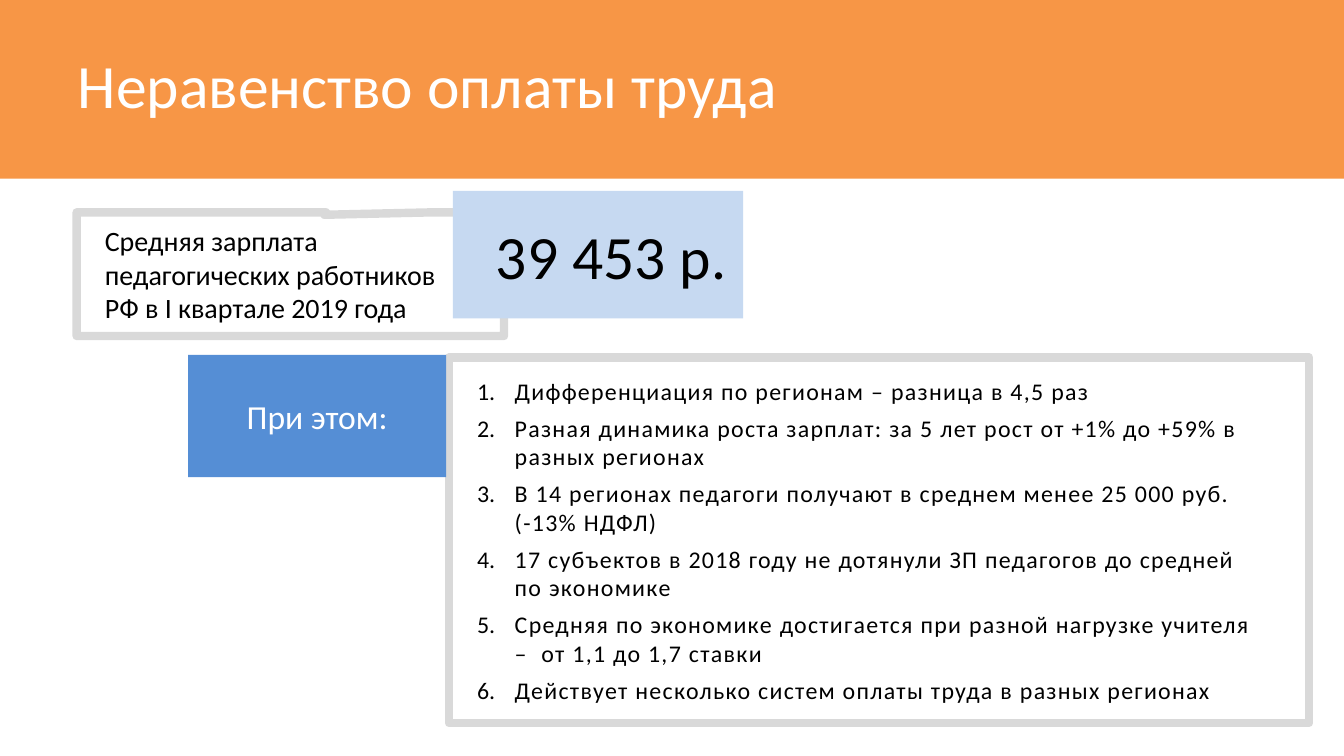
"""Build a slide on unequal teacher pay across regions."""
from lxml.etree import SubElement
from pptx import Presentation
from pptx.dml.color import RGBColor
from pptx.enum.shapes import MSO_SHAPE
from pptx.enum.text import MSO_ANCHOR, MSO_AUTO_SIZE, PP_ALIGN
from pptx.oxml.ns import qn
from pptx.util import Inches, Pt

ORANGE = RGBColor(0xF7, 0x96, 0x46)
PALE = RGBColor(0xC6, 0xD9, 0xF1)
BLUE = RGBColor(0x55, 0x8E, 0xD5)
GREY = RGBColor(0xD9, 0xD9, 0xD9)
WHITE = RGBColor(0xFF, 0xFF, 0xFF)
BLACK = RGBColor(0, 0, 0)

TITLE = "Неравенство оплаты труда"
LABEL = "Средняя зарплата педагогических работников РФ в I квартале 2019 года"
PAY = [("39 453 ", 33), ("р.", 32)]
LEAD = "При этом:"
FACTS = [
    ["Дифференциация по регионам – разница в 4,5 раз"],
    ["Разная динамика роста зарплат: за 5 лет рост от +1% до +59% в разных регионах"],
    ["В 14 регионах педагоги получают в среднем менее 25 000 руб. ", "(-13% НДФЛ)"],
    ["17 субъектов в 2018 году не дотянули ЗП педагогов до средней", "по экономике"],
    ["Средняя по экономике достигается при разной нагрузке учителя", "–  от 1,1 до 1,7 ставки"],
    ["Действует несколько систем оплаты труда в разных регионах"],
]
WIDE = (0.21, 0.04, 0.3, 0.04)


def style(shape, box, fill, pads, edge=None):
    shape.left, shape.top, shape.width, shape.height = map(Inches, box)
    shape.fill.solid()
    shape.fill.fore_color.rgb = fill
    if edge is None:
        shape.line.fill.background()
    else:
        shape.line.color.rgb = edge
        shape.line.width = Pt(4.5)
    frame = shape.text_frame
    frame.word_wrap = True
    frame.auto_size = MSO_AUTO_SIZE.NONE
    frame.vertical_anchor = MSO_ANCHOR.MIDDLE
    (frame.margin_left, frame.margin_top,
     frame.margin_right, frame.margin_bottom) = map(Inches, pads)
    return frame


def add_box(kind, box, fill, pads, edge=None):
    shape = slide.shapes.add_shape(kind, *map(Inches, box))
    shape.shadow.inherit = False
    return shape, style(shape, box, fill, pads, edge)


def setup(para, left=0, hang=0, after=0, align=PP_ALIGN.LEFT):
    para.alignment = align
    para.space_before = Pt(0)
    para.space_after = Pt(after)
    props = para._p.get_or_add_pPr()
    props.set("marL", str(Inches(left)))
    props.set("indent", str(Inches(hang)))
    return props


def add_run(para, text, size, color=BLACK):
    run = para.add_run()
    run.text = text
    run.font.size = Pt(size)
    run.font.name = "Calibri"
    run.font.color.rgb = color
    return run


deck = Presentation()
deck.slide_width = Inches(10)
deck.slide_height = deck.slide_width * 9 // 16
slide = deck.slides.add_slide(deck.slide_layouts[1])
title, body = slide.placeholders

frame = style(title, (0, 0, 10, 1.33), ORANGE, (0.06,) * 4)
para = frame.paragraphs[0]
setup(para, 0.52)
para.line_spacing = 0.88
add_run(para, TITLE, 33, WHITE)

frame = style(body, (3.34, 2.66, 6.4, 2.72), WHITE, WIDE, GREY)
for i, lines in enumerate(FACTS):
    para = frame.add_paragraph() if i else frame.paragraphs[0]
    props = setup(para, 0.28, -0.28, 4.5)
    SubElement(props, qn("a:buFont"), typeface="+mj-lt")
    SubElement(props, qn("a:buAutoNum"), type="arabicPeriod")
    for j, line in enumerate(lines):
        if j:
            para.add_line_break()
        run = add_run(para, line, 12.75)
        run.font._element.set("spc", "75")

note, frame = add_box(MSO_SHAPE.RECTANGULAR_CALLOUT, (0.57, 1.58, 3.18, 0.92), WHITE, WIDE, GREY)
note.adjustments[0], note.adjustments[1] = 0.08, -0.48
setup(frame.paragraphs[0], after=4.5)
add_run(frame.paragraphs[0], LABEL, 15)

_, frame = add_box(MSO_SHAPE.RECTANGLE, (3.37, 1.42, 2.16, 0.95), PALE, (0.12,) * 4)
setup(frame.paragraphs[0], 0.2)
for text, size in PAY:
    add_run(frame.paragraphs[0], text, size)

lead, frame = add_box(MSO_SHAPE.ROUNDED_RECTANGLE, (1.4, 2.64, 1.92, 0.91), BLUE, (0.1, 0.05, 0.1, 0.05))
lead.adjustments[0] = 0
setup(frame.paragraphs[0], align=PP_ALIGN.CENTER)
add_run(frame.paragraphs[0], LEAD, 18, WHITE)

deck.save("out.pptx")
